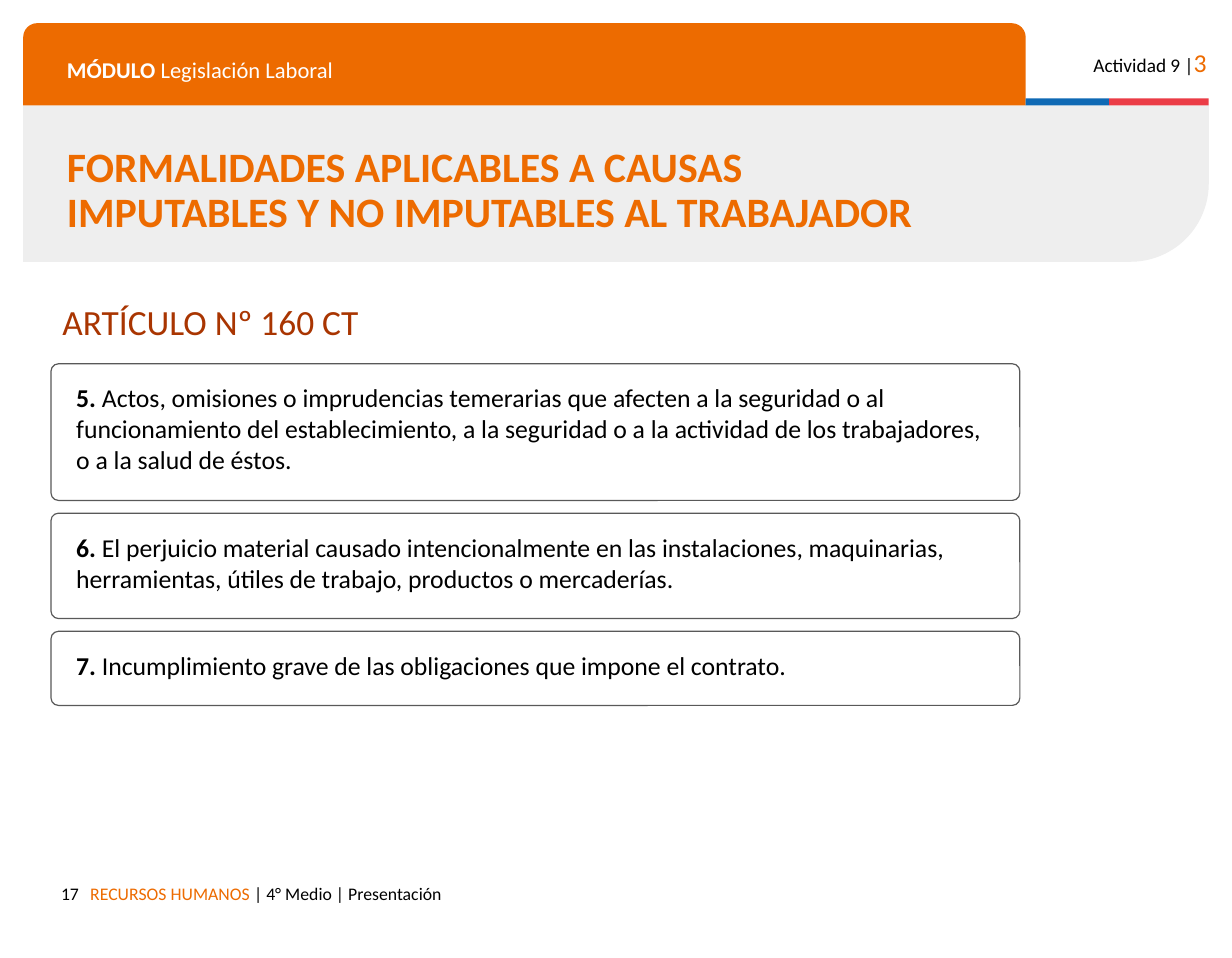
"""Builds the slide on the formalities of article 160 CT, on a grid of 1063 columns by 827 rows."""
import pptx
import pptx.dml.color
import pptx.enum.shapes
import pptx.enum.text
import pptx.util

COLS, ROWS = 1063, 827
ORANGE, BLACK, WHITE = "ED6B00", "000000", "FFFFFF"
SHAPE = pptx.enum.shapes.MSO_SHAPE
ALIGN = pptx.enum.text.PP_ALIGN
ANCHOR = pptx.enum.text.MSO_ANCHOR
rgb = pptx.dml.color.RGBColor.from_string

prs = pptx.Presentation()
prs.slide_width = pptx.util.Inches(10.63)
prs.slide_height = pptx.util.Inches(8.27)
col, row = prs.slide_width / COLS, prs.slide_height / ROWS
slide = prs.slides.add_slide(prs.slide_layouts[6])


def add_block(kind, x, y, w, h, fill=None, line=None, adj=()):
    sp = slide.shapes.add_shape(kind, int(x * col), int(y * row), int(w * col), int(h * row))
    sp.shadow.inherit = False
    for i, value in enumerate(adj):
        sp.adjustments[i] = value
    if fill:
        sp.fill.solid()
        sp.fill.fore_color.rgb = rgb(fill)
    else:
        sp.fill.background()
    if line:
        sp.line.color.rgb = rgb(line)
        sp.line.width = pptx.util.Pt(0.75)
    else:
        sp.line.fill.background()
    return sp


def add_text(x, y, w, h, *runs, size=11, color=BLACK, bold=False, align=ALIGN.LEFT,
             anchor=ANCHOR.TOP, spacing=None, inset=10):
    """Each run is a text and a dict of what differs from the format of the box."""
    sp = slide.shapes.add_textbox(int(x * col), int(y * row), int(w * col), int(h * row))
    tf = sp.text_frame
    tf.word_wrap = True
    tf.vertical_anchor = anchor
    tf.margin_left = tf.margin_right = int(10 * col)
    tf.margin_top = tf.margin_bottom = int(inset * row)
    p = tf.paragraphs[0]
    p.alignment = align
    p.line_spacing = spacing
    for text, own in runs:
        r = p.add_run()
        r.text = text
        r.font.name = "Calibri"
        r.font.size = pptx.util.Pt(own.get("size", size))
        r.font.bold = own.get("bold", bold)
        r.font.color.rgb = rgb(own.get("color", color))


band = add_block(SHAPE.ROUND_1_RECTANGLE, 20, 91, 1023, 135, "EEEEEE", adj=[0.5])
band.rotation = 180
band._element.spPr.xfrm.set("flipH", "1")
add_block(SHAPE.ROUND_2_SAME_RECTANGLE, 20, 20, 865, 71, ORANGE, adj=[0.17, 0])
add_block(SHAPE.RECTANGLE, 885, 85, 72, 6, "0F69B4")
add_block(SHAPE.RECTANGLE, 957, 85, 86, 6, "EB3C46")

add_text(68, 753, 715, 38, ("RECURSOS HUMANOS ", {"color": ORANGE}),
         ("| 4° Medio | Presentación", {}))
add_text(20, 753, 58, 29, ("17", {}), align=ALIGN.RIGHT)
add_text(923, 30, 128, 38, ("Actividad 9 |", {}), ("3", {"size": 16, "color": ORANGE}),
         size=12, align=ALIGN.RIGHT)
add_text(48, 38, 814, 35, ("MÓDULO ", {"bold": True}), ("Legislación Laboral", {}),
         size=14, color=WHITE)
add_text(48, 115, 766, 100,
         ("FORMALIDADES APLICABLES A CAUSAS IMPUTABLES Y NO IMPUTABLES AL TRABAJADOR", {}),
         size=26, color=ORANGE, bold=True, anchor=ANCHOR.MIDDLE, spacing=0.9)
add_text(44, 254, 458, 47, ("ARTÍCULO Nº 160 CT", {}), size=22, color="A93501", inset=5)

causes = [
    ("5. ", 3, "Actos, omisiones o imprudencias temerarias que afecten a la seguridad o al "
               "funcionamiento del establecimiento, a la seguridad o a la actividad de los "
               "trabajadores, o a la salud de éstos."),
    ("6. ", 2, "El perjuicio material causado intencionalmente en las instalaciones, "
               "maquinarias, herramientas, útiles de trabajo, productos o mercaderías."),
    ("7. ", 1, "Incumplimiento grave de las obligaciones que impone el contrato."),
]
LINE, RADIUS, GAP = 27, 6.5, 11
top = 314
for number, lines, cause in causes:
    height = lines * LINE + 37
    add_block(SHAPE.ROUNDED_RECTANGLE, 44, top, 836, height, line="595959", adj=[RADIUS / height])
    add_text(56, top + GAP, 806, lines * LINE + 10, (number, {"bold": True}), (cause, {}),
             size=16, inset=5)
    top += height + GAP

prs.save("out.pptx")
